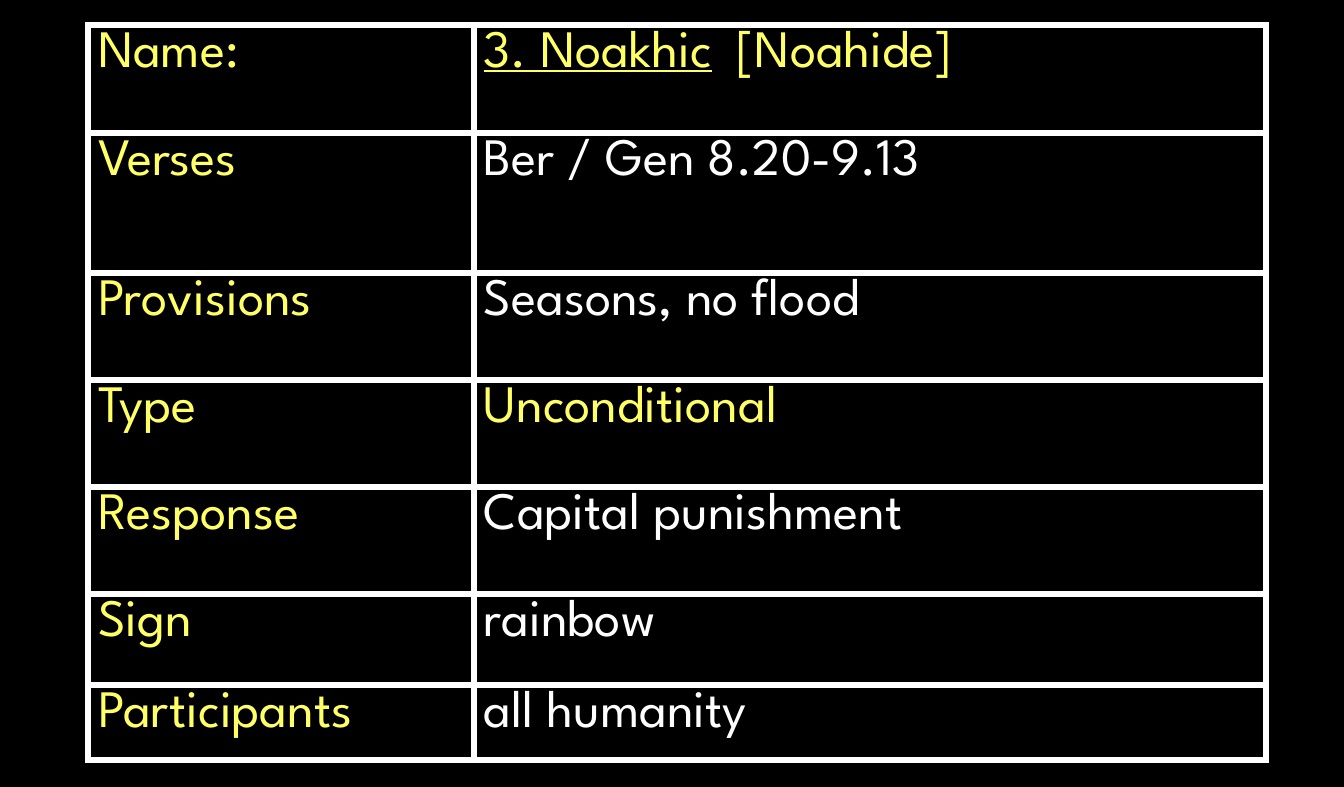
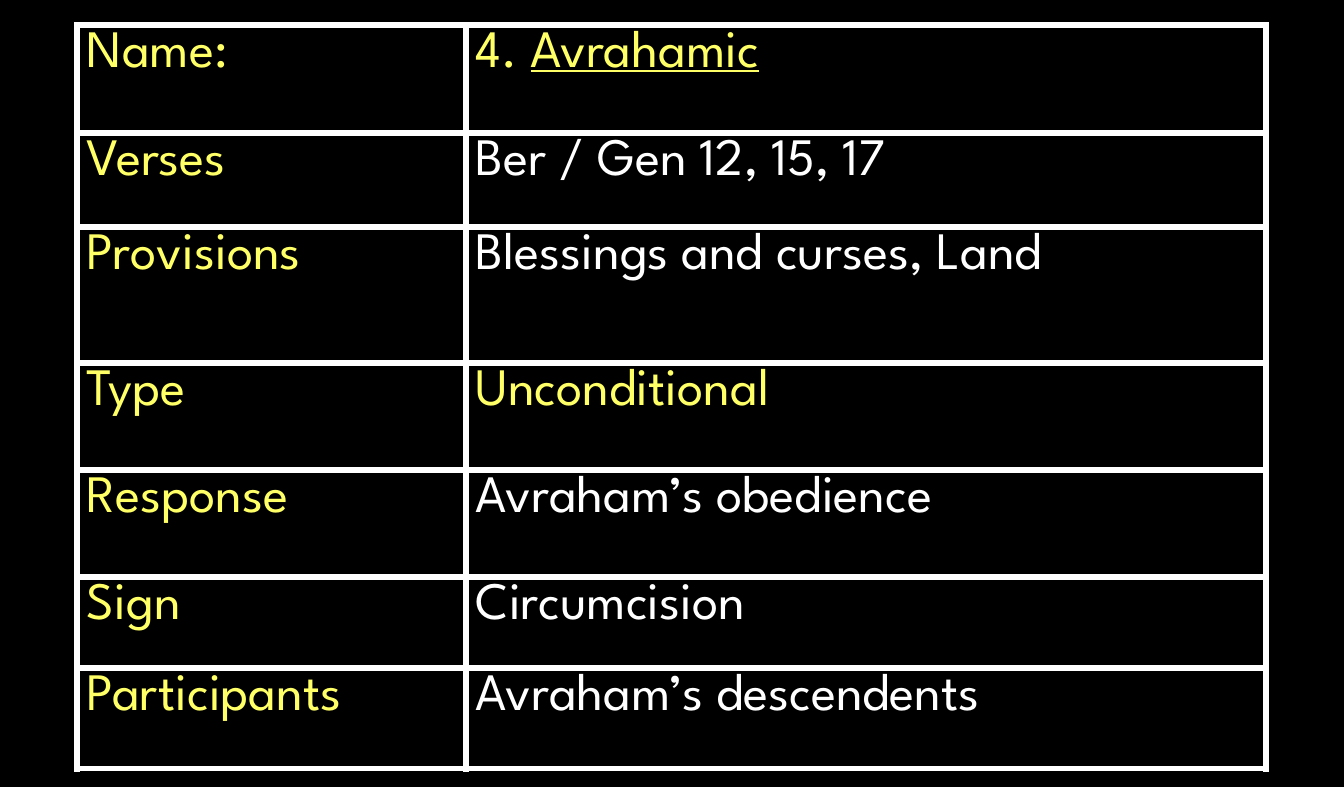
import pptx
import pptx.dml.color
import pptx.oxml
import pptx.oxml.ns
import pptx.util

COLOURS = {"background": "000000", "border": "FFFFFF", "text": "FFFFFF", "accent": "FFFF66"}
FONT = "League Spartan"
FONT_SIZE = 27
BORDER_WIDTH = 3
TABLE_TOP = 25
ACCENT_ROWS = ("Name:", "Type")
LABELS = ["Name:", "Verses", "Provisions", "Type", "Response", "Sign", "Participants"]
NAMESPACE = pptx.oxml.ns.nsdecls("a")

COVENANTS = [
    {
        "left": 88,
        "columns": [386, 792],
        "rows": [108, 140, 107, 107, 107, 91, 75],
        "name": [("3. Noakhic", True), ("\t[Noahide]", False)],
        "tab": 253,
        "details": ["Ber / Gen 8.20-9.13", "Seasons, no flood", "Unconditional",
                    "Capital punishment", "rainbow", "all humanity"],
    },
    {
        "left": 77,
        "columns": [389, 800],
        "rows": [108, 94, 136, 107, 107, 91, 101],
        "name": [("4. ", False), ("Avrahamic", True)],
        "tab": None,
        "details": ["Ber / Gen 12, 15, 17", "Blessings and curses, Land", "Unconditional",
                    "Avraham’s obedience", "Circumcision", "Avraham’s descendents"],
    },
]


def px(length):
    return pptx.util.Emu(round(length * 914400 / 140))


def write_cell(cell, spans, colour, tab=None):
    cell.margin_left = cell.margin_right = px(10)
    cell.margin_top = cell.margin_bottom = px(6)
    properties = cell._tc.get_or_add_tcPr()
    for side in ("lnL", "lnR", "lnT", "lnB"):
        properties.append(pptx.oxml.parse_xml(
            f'<a:{side} {NAMESPACE} w="{pptx.util.Pt(BORDER_WIDTH)}"><a:solidFill>'
            f'<a:srgbClr val="{COLOURS["border"]}"/></a:solidFill></a:{side}>'))
    cell.fill.solid()
    cell.fill.fore_color.rgb = pptx.dml.color.RGBColor.from_string(COLOURS["background"])
    para = cell.text_frame.paragraphs[0]
    if tab:
        para._p.get_or_add_pPr().append(pptx.oxml.parse_xml(
            f'<a:tabLst {NAMESPACE}><a:tab pos="{px(tab)}" algn="l"/></a:tabLst>'))
    para.font.name = FONT
    para.font.size = pptx.util.Pt(FONT_SIZE)
    para.font.color.rgb = pptx.dml.color.RGBColor.from_string(COLOURS[colour])
    for text, underlined in spans:
        span = para.add_run()
        span.text = text
        if underlined:
            span.font.underline = True


deck = pptx.Presentation()
deck.slide_width = px(1344)
deck.slide_height = px(787)
background = deck.slide_master.background.fill
background.solid()
background.fore_color.rgb = pptx.dml.color.RGBColor.from_string(COLOURS["background"])

for covenant in COVENANTS:
    page = deck.slides.add_slide(deck.slide_layouts.get_by_name("Blank"))
    table = page.shapes.add_table(
        len(LABELS), 2, px(covenant["left"]), px(TABLE_TOP),
        px(sum(covenant["columns"])), px(sum(covenant["rows"]))).table
    table.first_row = False
    table.horz_banding = False
    for column, width in zip(table.columns, covenant["columns"]):
        column.width = px(width)
    for row, height in zip(table.rows, covenant["rows"]):
        row.height = px(height)

    values = [covenant["name"]] + [[(detail, False)] for detail in covenant["details"]]
    for index, (label, spans) in enumerate(zip(LABELS, values)):
        write_cell(table.cell(index, 0), [(label, False)], "accent")
        write_cell(table.cell(index, 1), spans,
                   "accent" if label in ACCENT_ROWS else "text",
                   covenant["tab"] if index == 0 else None)

deck.save("out.pptx")
